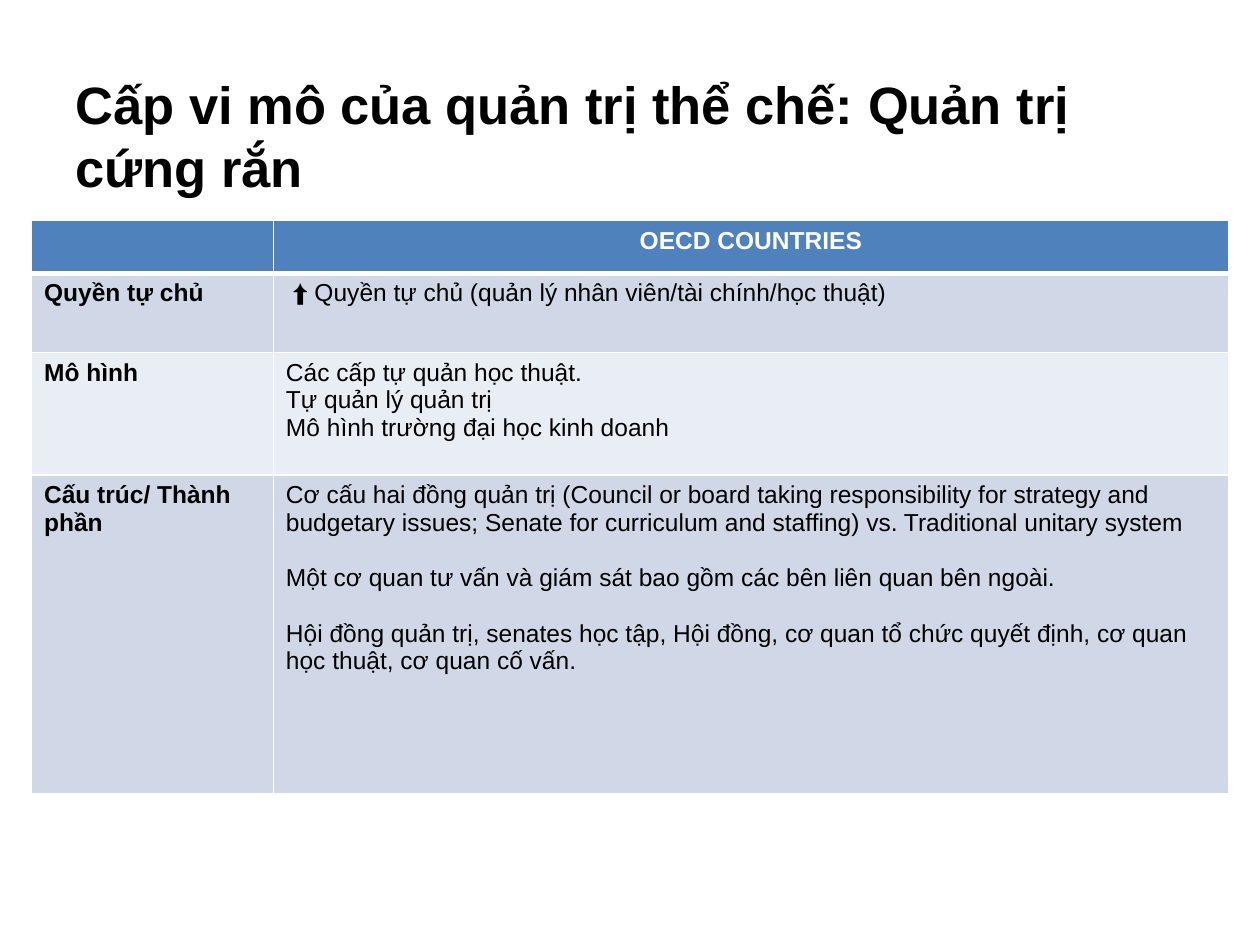
import pptx
import pptx.util
import pptx.dml.color
import pptx.enum.text
import pptx.oxml
import pptx.oxml.ns

Inches, Pt = pptx.util.Inches, pptx.util.Pt
RGBColor = pptx.dml.color.RGBColor
PP_ALIGN = pptx.enum.text.PP_ALIGN

BLACK = RGBColor(0x00, 0x00, 0x00)
WHITE = RGBColor(0xFF, 0xFF, 0xFF)
BLUE = RGBColor(0x4F, 0x81, 0xBD)
BAND = RGBColor(0xD0, 0xD8, 0xE8)
PALE = RGBColor(0xE9, 0xED, 0xF4)
FILLS = [BLUE, BAND, PALE, BAND]

COLS = [1.92, 7.58]
ROWS = [0.42, 0.63, 0.97, 2.53]
GAPS = [0, 0, 0, 16]  # points between the paragraphs of each row
CELLS = [
    [[], ["OECD COUNTRIES"]],
    [["Quyền tự chủ"],
     [" ⬆ Quyền tự chủ (quản lý nhân viên/tài chính/học thuật)"]],
    [["Mô hình"],
     ["Các cấp tự quản học thuật.",
      "Tự quản lý quản trị",
      "Mô hình trường đại học kinh doanh"]],
    [["Cấu trúc/ Thành phần"],
     ["Cơ cấu hai đồng quản trị (Council or board taking responsibility for "
      "strategy and budgetary issues; Senate for curriculum and staffing) "
      "vs. Traditional unitary system",
      "Một cơ quan tư vấn và giám sát bao gồm các bên liên quan bên ngoài.",
      "Hội đồng quản trị, senates học tập, Hội đồng, cơ quan tổ chức quyết "
      "định, cơ quan học thuật, cơ quan cố vấn."]],
]


def add_run(para, text, size, color, bold):
    run = para.add_run()
    run.text = text
    font = run.font
    font.name, font.size, font.bold = "Arial", Pt(size), bold
    font.color.rgb = color


def add_edges(cell, row):
    """Draw white cell borders, thick between the header and the body."""
    props = cell._tc.get_or_add_tcPr()
    thick = {"B": row == 0, "T": row == 1}
    for spot, side in enumerate("LRTB"):
        width = Pt(3 if thick.get(side) else 1)
        edge = pptx.oxml.parse_xml(
            f'<a:ln{side} {pptx.oxml.ns.nsdecls("a")} w="{width}">'
            f'<a:solidFill><a:srgbClr val="{WHITE}"/></a:solidFill></a:ln{side}>')
        props.insert(spot, edge)


deck = pptx.Presentation()
deck.slide_width, deck.slide_height = Inches(10), Inches(7.5)
slide = deck.slides.add_slide(deck.slide_layouts[5])

title = slide.shapes.title
title.left, title.top = Inches(0.5), Inches(0.52)
title.width, title.height = Inches(9), Inches(0.87)
frame = title.text_frame
frame.word_wrap = True
frame.auto_size = pptx.enum.text.MSO_AUTO_SIZE.NONE
frame.vertical_anchor = pptx.enum.text.MSO_ANCHOR.TOP
para = frame.paragraphs[0]
para.alignment = PP_ALIGN.LEFT
add_run(para, "Cấp vi mô của quản trị thể chế: Quản trị cứng rắn", 30, BLACK, True)

table = slide.shapes.add_table(
    len(ROWS), len(COLS), Inches(0.25), Inches(1.75),
    Inches(sum(COLS)), Inches(sum(ROWS))).table
for col, width in zip(table.columns, COLS):
    col.width = Inches(width)
for row, height in zip(table.rows, ROWS):
    row.height = Inches(height)

for r, line in enumerate(CELLS):
    for c, texts in enumerate(line):
        cell = table.cell(r, c)
        cell.fill.solid()
        cell.fill.fore_color.rgb = FILLS[r]
        add_edges(cell, r)
        for i, text in enumerate(texts):
            body = cell.text_frame
            para = body.add_paragraph() if i else body.paragraphs[0]
            para.alignment = PP_ALIGN.LEFT if r else PP_ALIGN.CENTER
            if i and GAPS[r]:
                para.space_before = Pt(GAPS[r])
            add_run(para, text, 14, BLACK if r else WHITE, r == 0 or c == 0)

deck.save("out.pptx")
